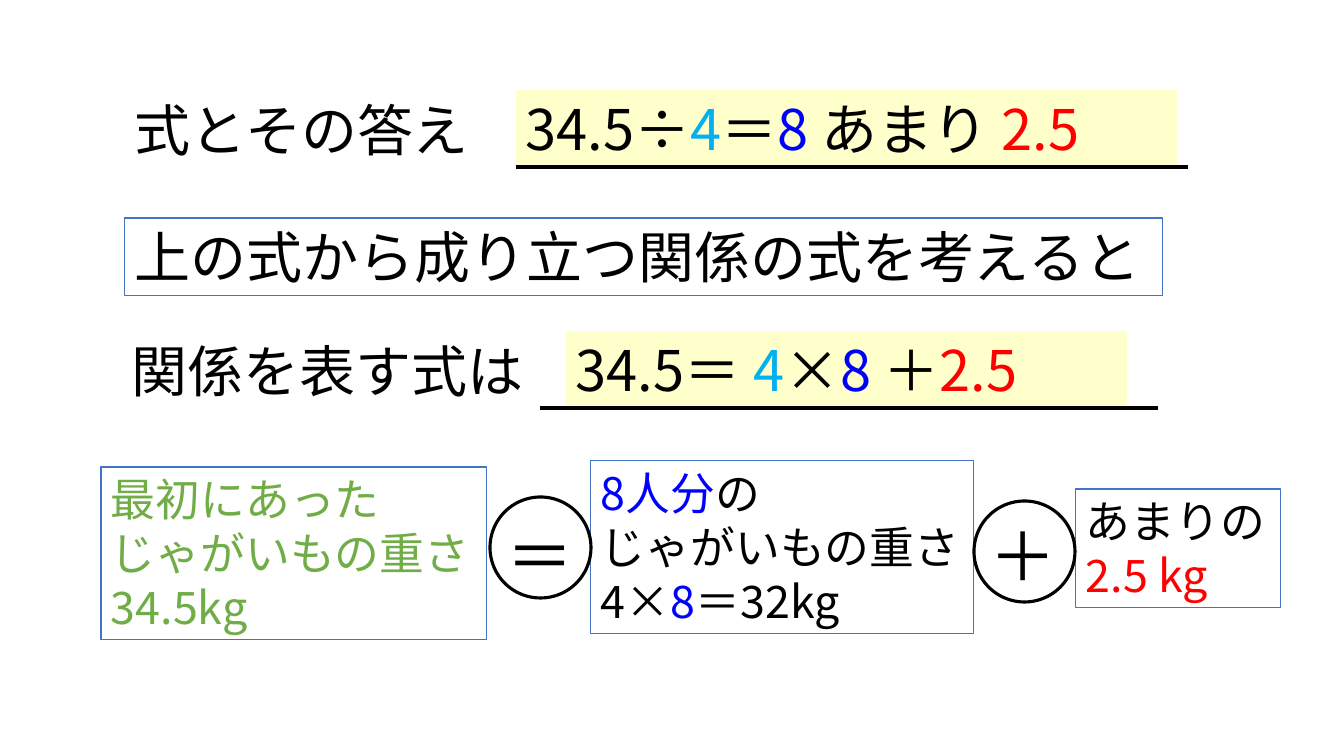
"""Build a slide that turns a division with remainder into a relation formula."""
from lxml import etree
from pptx import Presentation
from pptx.dml.color import RGBColor
from pptx.enum.shapes import MSO_CONNECTOR, MSO_SHAPE
from pptx.enum.text import MSO_AUTO_SIZE
from pptx.oxml.ns import qn
from pptx.util import Emu, Pt

STRAIGHT = MSO_CONNECTOR.STRAIGHT
OVAL = MSO_SHAPE.OVAL
GROW = MSO_AUTO_SIZE.SHAPE_TO_FIT_TEXT

THEME = {
    "font": "Noto Sans CJK JP",
    "formula": 40, "part": 32, "operator": 48,
    "black": "000000", "divisor": "00B0F0", "quotient": "0000FF",
    "remainder": "FF0000", "total": "70AD47",
    "frame": "4472C4", "highlight": "FFFFCC", "white": "FFFFFF",
}


def px(value):
    return Emu(round(value * 914400 / 100.8))


def add_text(slide, bounds, size, lines, frame=None, fill=None, wrap=True):
    shape = slide.shapes.add_textbox(*map(px, bounds))
    if frame:
        shape.line.color.rgb = RGBColor.from_string(THEME[frame])
        shape.line.width = Pt(0.75)
    if fill:
        shape.fill.solid()
        shape.fill.fore_color.rgb = RGBColor.from_string(THEME[fill])
    text_frame = shape.text_frame
    text_frame.word_wrap = wrap
    text_frame.auto_size = GROW
    text_frame.text = "\n".join("" for line in lines)
    for paragraph, line in zip(text_frame.paragraphs, lines):
        for text, color in line:
            run = paragraph.add_run()
            run.text = text
            run.font.size = Pt(THEME[size])
            run.font.color.rgb = RGBColor.from_string(THEME[color])
            run.font.name = THEME["font"]
            east_asian = etree.SubElement(run.font._element, qn("a:ea"))
            east_asian.set("typeface", THEME["font"])


presentation = Presentation()
presentation.slide_width = px(1344)
presentation.slide_height = px(756)
slide = presentation.slides.add_slide(presentation.slide_layouts[6])

add_text(slide, (125, 218, 1038, 78), "formula",
         [[("上の式から成り立つ関係の式を考えると", "black")]], frame="frame", wrap=False)
add_text(slide, (122, 332, 415, 78), "formula", [[("関係を表す式は", "black")]])
add_text(slide, (125, 91, 360, 78), "formula", [[("式とその答え", "black")]], wrap=False)

parts = [
    ((101, 467, 386, 173), [
        [("最初にあった", "total")],
        [("じゃがいもの重さ", "total")],
        [("34.5kg", "total")],
    ]),
    ((591, 461, 383, 173), [
        [("8人分", "quotient"), ("の", "black")],
        [("じゃがいもの重さ", "black")],
        [("4×", "black"), ("8", "quotient"), ("＝32kg", "black")],
    ]),
    ((1076, 489, 205, 119), [
        [("あまりの", "black")],
        [("2.5 kg", "remainder")],
    ]),
]
for bounds, lines in parts:
    add_text(slide, bounds, "part", lines, frame="frame")

for symbol, circle_left, circle_top, text_left in (("＝", 490, 497, 497), ("＋", 974, 501, 980)):
    circle = slide.shapes.add_shape(OVAL, px(circle_left), px(circle_top), px(101), px(101))
    circle.shadow.inherit = False
    circle.fill.solid()
    circle.fill.fore_color.rgb = RGBColor.from_string(THEME["white"])
    circle.line.color.rgb = RGBColor.from_string(THEME["black"])
    circle.line.width = Pt(2.25)
    add_text(slide, (text_left, 509, 80, 92), "operator", [[(symbol, "black")]])

formulas = [
    ((566, 331, 561, 78), True, (540, 1158, 408),
     [("34.5＝ ", "black"), ("4", "divisor"), ("×", "black"), ("8 ", "quotient"),
      ("＋", "black"), ("2.5", "remainder")]),
    ((516, 90, 661, 78), False, (516, 1188, 167),
     [("34.5÷", "black"), ("4", "divisor"), ("＝", "black"), ("8 ", "quotient"),
      ("あまり ", "black"), ("2.5", "remainder")]),
]
for bounds, wrap, (start, end, height), line in formulas:
    add_text(slide, bounds, "formula", [line], fill="highlight", wrap=wrap)
    underline = slide.shapes.add_connector(STRAIGHT, px(start), px(height), px(end), px(height))
    underline.line.color.rgb = RGBColor.from_string(THEME["black"])
    underline.line.width = Pt(3)
    etree.SubElement(underline._element.spPr, qn("a:effectLst"))

presentation.save("out.pptx")
